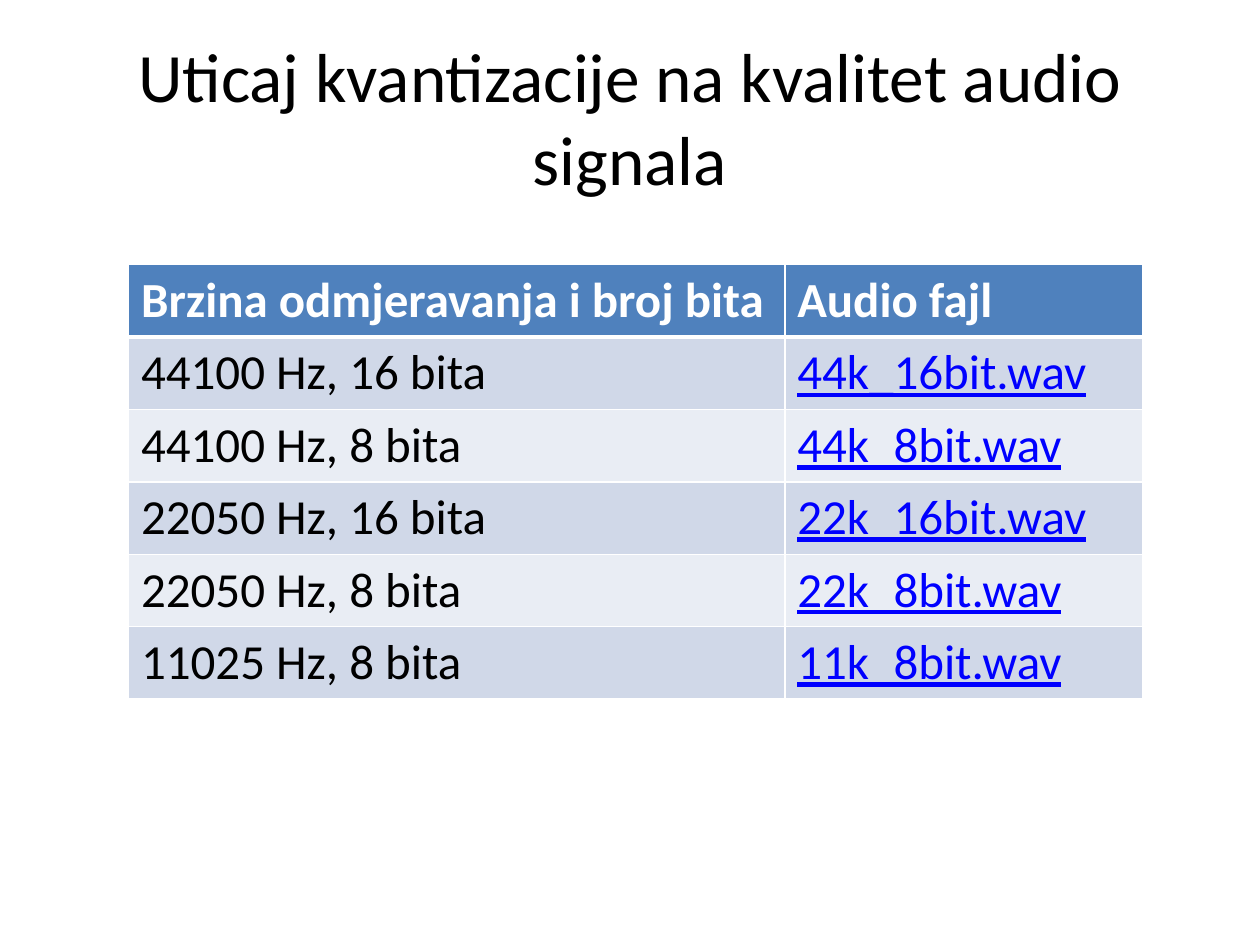
from lxml import etree
from pptx import Presentation
from pptx.dml.color import RGBColor
from pptx.enum.text import MSO_ANCHOR, PP_ALIGN
from pptx.oxml.ns import qn
from pptx.util import Inches, Pt

MIDDLE = MSO_ANCHOR.MIDDLE
CENTER = PP_ALIGN.CENTER

TITLE = "Uticaj kvantizacije na kvalitet audio signala"
HEADER = ("Brzina odmjeravanja i broj bita", "Audio fajl")
RECORDINGS = [
    ("44100 Hz, 16 bita", "44k_16bit.wav"),
    ("44100 Hz, 8 bita", "44k_8bit.wav"),
    ("22050 Hz, 16 bita", "22k_16bit.wav"),
    ("22050 Hz, 8 bita", "22k_8bit.wav"),
    ("11025 Hz, 8 bita", "11k_8bit.wav"),
]
COLORS = {
    "text": "000000",
    "white": "FFFFFF",
    "link": "0000FF",
    "header": "4F81BD",
    "odd": "D0D8E8",
    "even": "E9EDF4",
}
FONT = "Calibri"
TITLE_FORMAT = {"size": Pt(39.6), "bold": False}
HEADER_FORMAT = {"size": Pt(28), "bold": True}
LABEL_FORMAT = {"size": Pt(28), "bold": False}
FILE_FORMAT = {**LABEL_FORMAT, "underline": True}

SLIDE_WIDTH, SLIDE_HEIGHT = 10, 7.5
TITLE_BOX = (0.05, 0.04, 0.9, 1 / 6)
TABLE_BOX = (0.102, 0.28, 0.805, 0.46)
COLUMN_SHARES = (0.647, 0.353)
THIN, THICK = 1, 3


def place(shares):
    sizes = (SLIDE_WIDTH, SLIDE_HEIGHT) * 2
    return [Inches(share * size) for share, size in zip(shares, sizes)]


def write(para, text, color, values):
    span = para.add_run()
    span.text = text
    span.font.name = FONT
    span.font.color.rgb = RGBColor.from_string(COLORS[color])
    for name, value in values.items():
        setattr(span.font, name, value)


def draw_borders(cell, widths):
    properties = cell._tc.get_or_add_tcPr()
    for side, width in widths.items():
        line = etree.SubElement(properties, qn(f"a:ln{side}"), w=str(Pt(width)))
        fill = etree.SubElement(line, qn("a:solidFill"))
        etree.SubElement(fill, qn("a:srgbClr"), val=COLORS["white"])


def add_title(slide):
    box = slide.shapes.add_textbox(*place(TITLE_BOX))
    frame = box.text_frame
    frame.word_wrap = True
    frame.vertical_anchor = MIDDLE
    para = frame.paragraphs[0]
    para.alignment = CENTER
    write(para, TITLE, "text", TITLE_FORMAT)


def add_recordings(slide):
    rows = [HEADER, *RECORDINGS]
    left, top, width, height = place(TABLE_BOX)
    table = slide.shapes.add_table(
        len(rows), len(HEADER), left, top, width, height
    ).table
    for column, share in zip(table.columns, COLUMN_SHARES):
        column.width = int(width * share)
    for row_index, texts in enumerate(rows):
        if row_index == 0:
            band = "header"
            styles = [("white", HEADER_FORMAT)] * len(HEADER)
        else:
            band = "odd" if row_index % 2 else "even"
            styles = [("text", LABEL_FORMAT), ("link", FILE_FORMAT)]
        borders = {
            "L": THIN,
            "R": THIN,
            "T": THICK if row_index == 1 else THIN,
            "B": THICK if row_index == 0 else THIN,
        }
        for column_index, (text, style) in enumerate(zip(texts, styles)):
            cell = table.cell(row_index, column_index)
            draw_borders(cell, borders)
            cell.fill.solid()
            cell.fill.fore_color.rgb = RGBColor.from_string(COLORS[band])
            write(cell.text_frame.paragraphs[0], text, *style)


def main():
    deck = Presentation()
    deck.slide_width = Inches(SLIDE_WIDTH)
    deck.slide_height = Inches(SLIDE_HEIGHT)
    slide = deck.slides.add_slide(deck.slide_layouts[6])
    add_title(slide)
    add_recordings(slide)
    deck.save("out.pptx")


if __name__ == "__main__":
    main()
